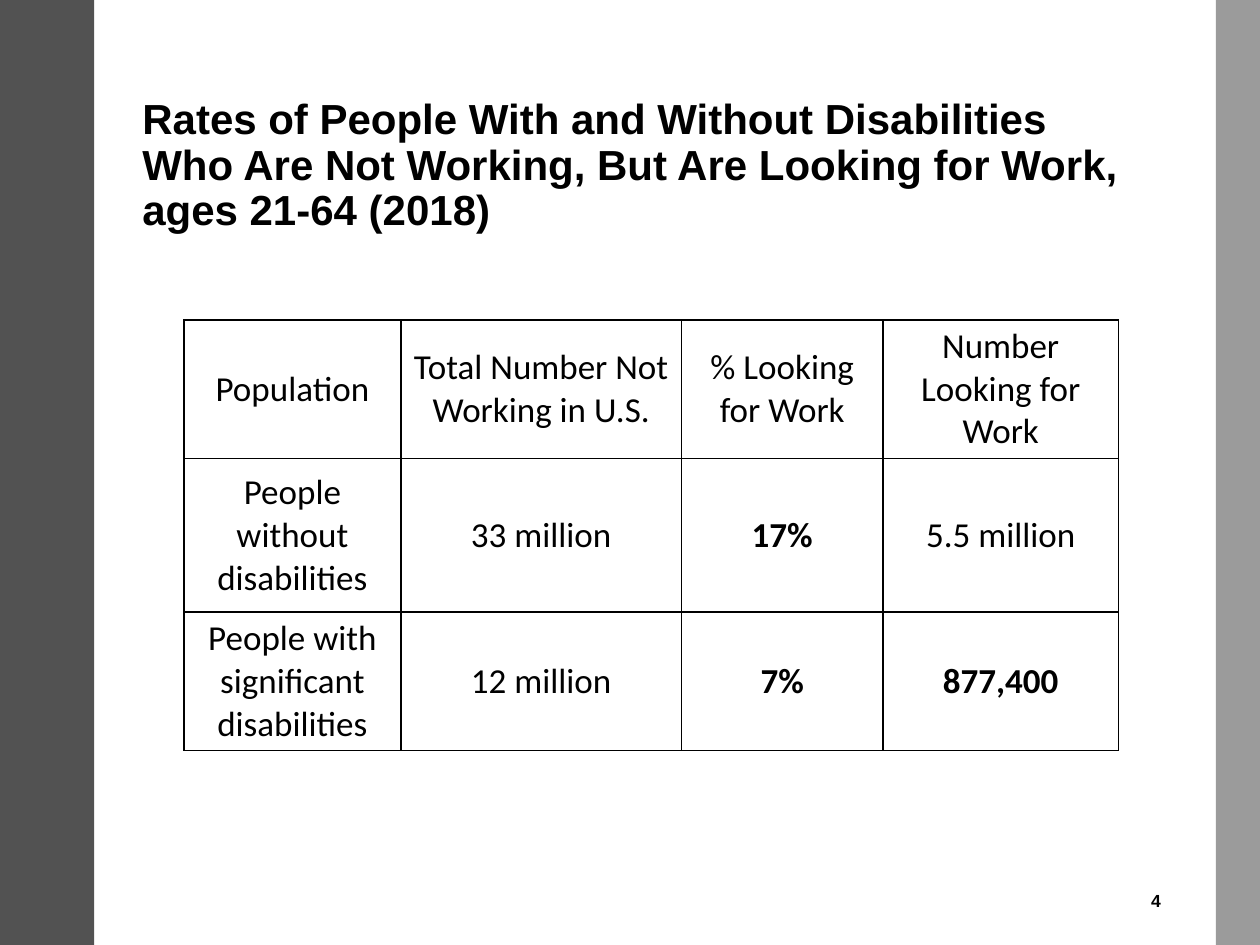
from lxml import etree
from pptx import Presentation
from pptx.dml.color import RGBColor
from pptx.enum.shapes import MSO_SHAPE
from pptx.enum.text import MSO_ANCHOR, PP_ALIGN
from pptx.oxml.ns import qn
from pptx.util import Cm, Pt

RECTANGLE = MSO_SHAPE.RECTANGLE
MIDDLE = MSO_ANCHOR.MIDDLE
LEFT, CENTER, RIGHT = PP_ALIGN.LEFT, PP_ALIGN.CENTER, PP_ALIGN.RIGHT

PAGE_WIDTH, PAGE_HEIGHT = 25.4, 19.05
BLACK = "000000"
TITLE = ("Rates of People With and Without Disabilities Who Are Not Working, "
         "But Are Looking for Work, ages 21-64 (2018)")
COLUMN_WIDTHS = [4.37, 5.66, 4.06, 4.75]
ROW_HEIGHTS = [2.79, 3.1, 2.79]
RATES = [
    ["Population", "Total Number Not Working in U.S.", "% Looking for Work",
     "Number Looking for Work"],
    ["People without disabilities", "33 million", "17%", "5.5 million"],
    ["People with significant disabilities", "12 million", "7%", "877,400"],
]
BOLD_VALUES = {"17%", "7%", "877,400"}


def color(hex_string):
    return RGBColor.from_string(hex_string)


def write(frame, text, size, font="Arial", bold=False, align=LEFT,
          line_spacing=None, space_after=0):
    frame.word_wrap = True
    para = frame.paragraphs[0]
    para.alignment = align
    para.line_spacing = line_spacing
    para.space_after = Pt(space_after)
    span = para.add_run()
    span.text = text
    span.font.name = font
    span.font.size = Pt(size)
    span.font.bold = bold
    span.font.color.rgb = color(BLACK)


def add_text(page, box, text, size, **text_format):
    frame = page.shapes.add_textbox(*map(Cm, box)).text_frame
    frame.vertical_anchor = MIDDLE
    write(frame, text, size, **text_format)


def add_side_band(page, box, fill, opacity=100):
    band = page.shapes.add_shape(RECTANGLE, *map(Cm, box))
    band.shadow.inherit = False
    band.line.fill.background()
    band.fill.solid()
    band.fill.fore_color.rgb = color(fill)
    if opacity < 100:
        tone = band.fill._xPr.find(".//" + qn("a:srgbClr"))
        etree.SubElement(tone, qn("a:alpha"), val=str(opacity * 1000))


def add_borders(cell, width=1):
    """Draw all four cell edges; they must precede the fill in the XML."""
    properties = cell._tc.get_or_add_tcPr()
    for index, edge in enumerate(("a:lnL", "a:lnR", "a:lnT", "a:lnB")):
        line = etree.Element(qn(edge), w=str(Pt(width)))
        fill = etree.SubElement(line, qn("a:solidFill"))
        etree.SubElement(fill, qn("a:srgbClr"), val=BLACK)
        properties.insert(index, line)


def add_rates_table(page, left, top):
    table = page.shapes.add_table(
        len(RATES), len(COLUMN_WIDTHS), Cm(left), Cm(top),
        Cm(sum(COLUMN_WIDTHS)), Cm(sum(ROW_HEIGHTS))).table
    table.first_row = table.horz_banding = False
    for column, width in zip(table.columns, COLUMN_WIDTHS):
        column.width = Cm(width)
    for row, height, texts in zip(table.rows, ROW_HEIGHTS, RATES):
        row.height = Cm(height)
        for cell, text in zip(row.cells, texts):
            cell.fill.background()
            cell.vertical_anchor = MIDDLE
            cell.margin_top = cell.margin_bottom = 0
            write(cell.text_frame, text, 20, font="Calibri", align=CENTER,
                  bold=text in BOLD_VALUES, space_after=9)
            add_borders(cell)


def main():
    deck = Presentation()
    deck.slide_width, deck.slide_height = Cm(PAGE_WIDTH), Cm(PAGE_HEIGHT)
    page = deck.slides.add_slide(deck.slide_layouts[6])
    add_text(page, (2.62, 1.52, 20.55, 3.68), TITLE, 24, bold=True,
             line_spacing=0.9)
    add_side_band(page, (0, 0, 1.9, PAGE_HEIGHT), "525252")
    add_text(page, (17.93, 17.65, 5.72, 1.02), "4", 10, bold=True,
             align=RIGHT, space_after=6)
    add_side_band(page, (24.51, 0, 0.96, PAGE_HEIGHT), "595959", opacity=60)
    add_rates_table(page, 3.71, 6.45)
    deck.save("out.pptx")


if __name__ == "__main__":
    main()
